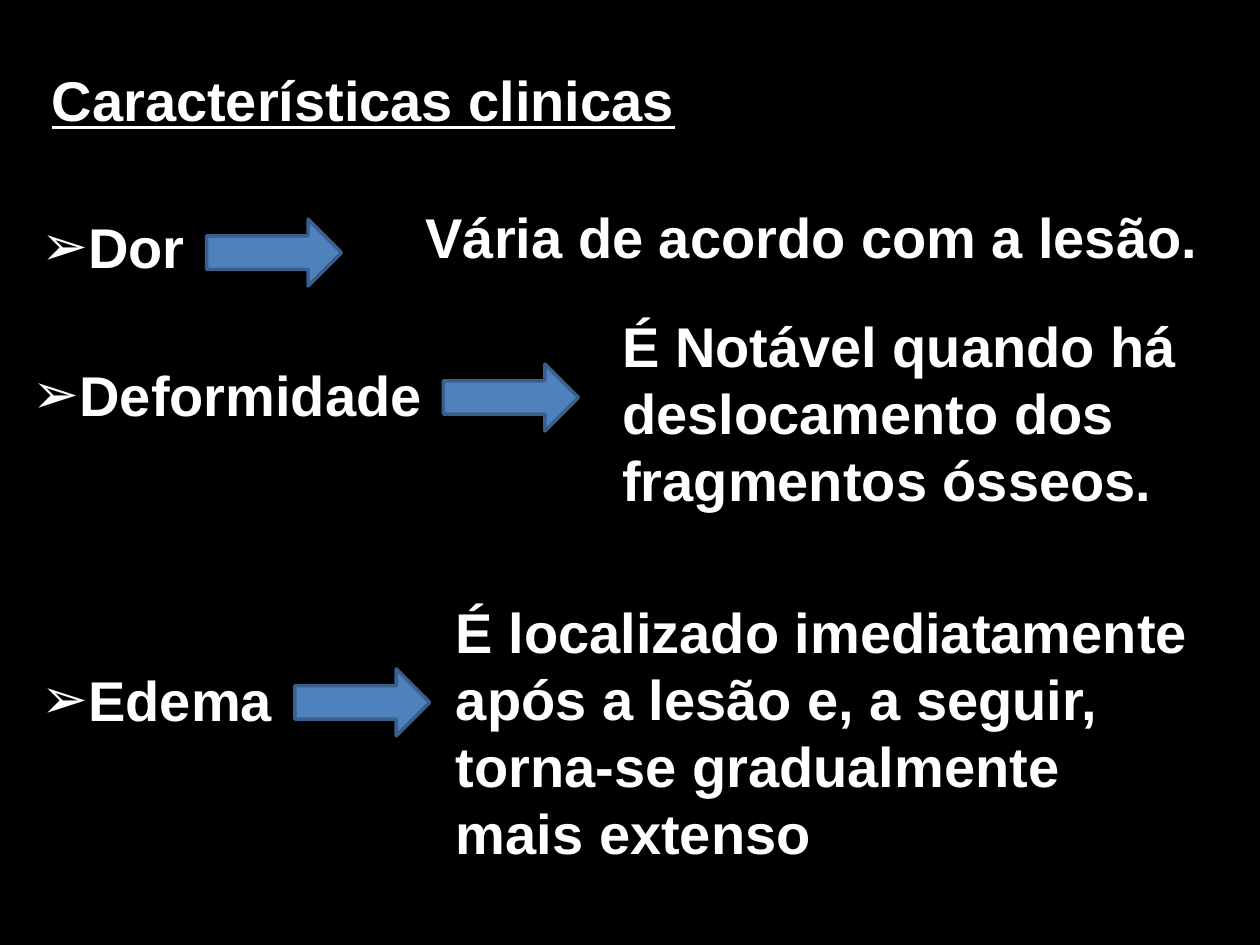
from dataclasses import dataclass

from lxml import etree
from pptx import Presentation
from pptx import util as u
from pptx.dml.color import RGBColor
from pptx.enum import shapes, text
from pptx.oxml.ns import qn
from pptx.slide import Slide

COLORS = {
    "background": "000000",
    "text": "FFFFFF",
    "arrow": "4F81BD",
    "outline": "3A5F8C",
}
BULLET_INDENT = u.Inches(0.34)


@dataclass(frozen=True)
class Area:
    left: float
    top: float
    width: float
    height: float = 0.64

    def lengths(self) -> tuple:
        return tuple(map(u.Inches, (self.left, self.top, self.width, self.height)))


@dataclass(frozen=True)
class Symptom:
    name: str
    name_area: Area
    arrow_area: Area
    description: str
    description_area: Area


SYMPTOMS = [
    Symptom("Dor", Area(0.23, 1.64, 9.45), Area(1.64, 1.74, 1.07, 0.53),
            "Vária de acordo com a lesão.", Area(3.28, 1.56, 6.41)),
    Symptom("Deformidade", Area(0.16, 2.81, 3.36), Area(3.52, 2.89, 1.07, 0.53),
            "É Notável quando há deslocamento dos fragmentos ósseos.",
            Area(4.84, 2.42, 4.77, 1.72)),
    Symptom("Edema", Area(0.23, 5.23, 2.42), Area(2.34, 5.31, 1.07, 0.53),
            "É localizado imediatamente após a lesão e, a seguir, "
            "torna-se gradualmente mais extenso", Area(3.52, 4.69, 6.09, 2.26)),
]


def color(name: str) -> RGBColor:
    return RGBColor.from_string(COLORS[name])


def write(box, content: str, underline: bool = False, bullet: bool = False) -> None:
    frame = box.text_frame
    frame.word_wrap = True
    frame.auto_size = text.MSO_AUTO_SIZE.SHAPE_TO_FIT_TEXT
    frame.vertical_anchor = text.MSO_ANCHOR.TOP
    para = frame.paragraphs[0]
    para.alignment = text.PP_ALIGN.LEFT
    span = para.add_run()
    span.text = content
    span.font.name = "Arial"
    span.font.size = u.Pt(32)
    span.font.bold = True
    span.font.underline = underline
    span.font.color.rgb = color("text")
    if bullet:
        properties = para._p.get_or_add_pPr()
        properties.set("marL", str(BULLET_INDENT))
        properties.set("indent", str(-BULLET_INDENT))
        etree.SubElement(properties, qn("a:buFont")).set("typeface", "Arial")
        etree.SubElement(properties, qn("a:buChar")).set("char", "➢")


def add_text(page: Slide, area: Area, content: str, bullet: bool = False) -> None:
    write(page.shapes.add_textbox(*area.lengths()), content, bullet=bullet)


def add_arrow(page: Slide, area: Area) -> None:
    arrow = page.shapes.add_shape(shapes.MSO_SHAPE.RIGHT_ARROW, *area.lengths())
    arrow.shadow.inherit = False
    arrow.fill.solid()
    arrow.fill.fore_color.rgb = color("arrow")
    arrow.line.color.rgb = color("outline")
    arrow.line.width = u.Pt(2)


def add_title(page: Slide, area: Area, content: str) -> None:
    title = page.shapes.title
    title.left, title.top, title.width, title.height = area.lengths()
    write(title, content, underline=True)


def add_symptom(page: Slide, symptom: Symptom) -> None:
    add_text(page, symptom.name_area, symptom.name, bullet=True)
    add_arrow(page, symptom.arrow_area)
    add_text(page, symptom.description_area, symptom.description)


def main() -> None:
    deck = Presentation()
    deck.slide_width, deck.slide_height = u.Inches(10), u.Inches(7.5)
    page = deck.slides.add_slide(deck.slide_layouts[5])
    page.background.fill.solid()
    page.background.fill.fore_color.rgb = color("background")
    add_title(page, Area(0.31, 0.47, 9.3), "Características clinicas")
    for symptom in SYMPTOMS:
        add_symptom(page, symptom)
    deck.save("out.pptx")


if __name__ == "__main__":
    main()
